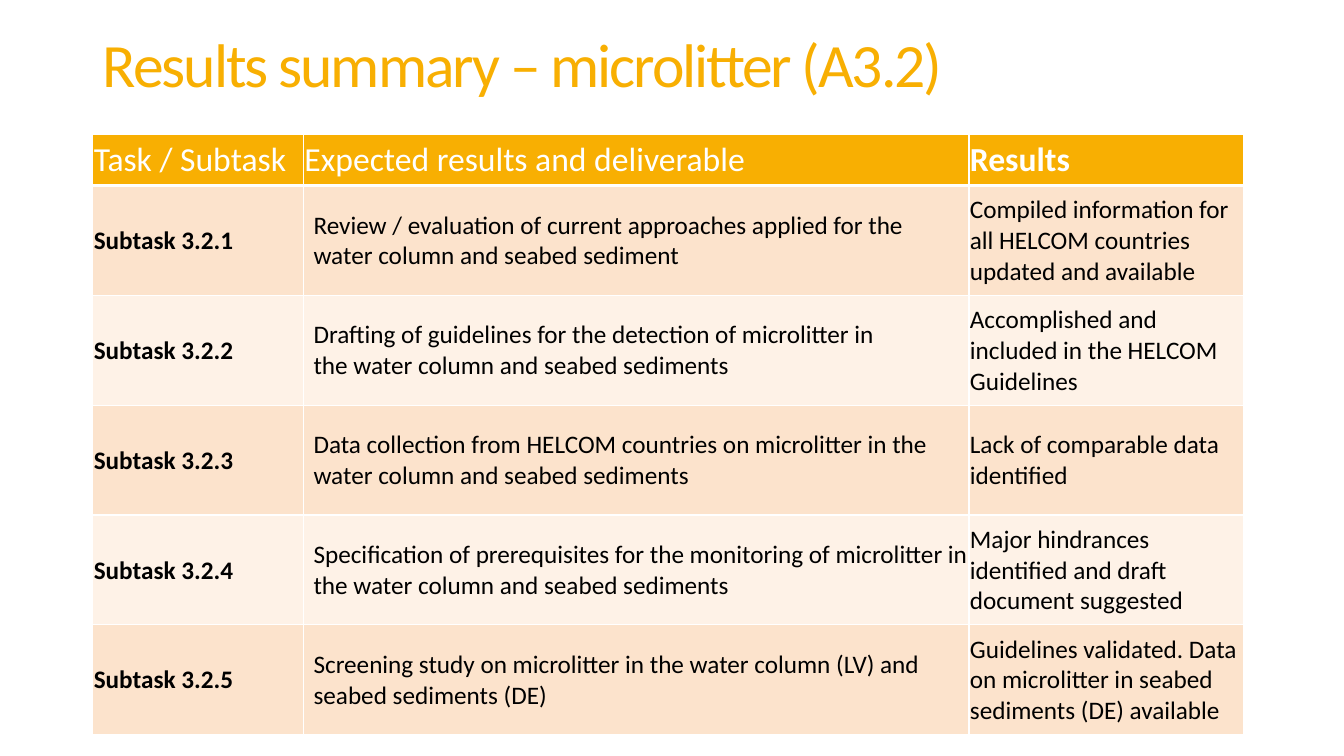
from dataclasses import dataclass

from lxml import etree
from pptx import Presentation
from pptx.dml.color import RGBColor
from pptx.enum.text import MSO_ANCHOR, PP_ALIGN
from pptx.oxml.ns import qn
from pptx.util import Inches, Pt

TOP, MIDDLE = MSO_ANCHOR.TOP, MSO_ANCHOR.MIDDLE
LEFT = PP_ALIGN.LEFT

FONT = "Calibri"
AMBER, WHITE, BLACK = "F8AF02", "FFFFFF", "000000"
BANDS = ("FCE3CC", "FEF2E7")

# Page grid, in inches
PAGE_WIDTH, PAGE_HEIGHT = 13.33, 7.5
MARGIN = 0.92
TABLE_TOP = 1.33
COLUMNS = (2.09, 6.6, 2.72)
HEADER_HEIGHT, ROW_HEIGHT = 0.51, 1.09
CELL_INSET = 0.01
DELIVERABLE_INDENT = 0.09


@dataclass
class Subtask:
    name: str
    deliverable: str
    result: str


HEADINGS = ("Task / Subtask", "Expected results and deliverable", "Results")
SUBTASKS = (
    Subtask("Subtask 3.2.1",
            "Review / evaluation of current approaches applied for the "
            "water column and seabed sediment",
            "Compiled information for all HELCOM countries updated and available"),
    Subtask("Subtask 3.2.2",
            "Drafting of guidelines for the detection of microlitter in \v"
            "the water column and seabed sediments",
            "Accomplished and included in the HELCOM Guidelines"),
    Subtask("Subtask 3.2.3",
            "Data collection from HELCOM countries on microlitter in the "
            "water column and seabed sediments",
            "Lack of comparable data identified"),
    Subtask("Subtask 3.2.4",
            "Specification of prerequisites for the monitoring of microlitter "
            "in the water column and seabed sediments",
            "Major hindrances identified and draft document suggested"),
    Subtask("Subtask 3.2.5",
            "Screening study on microlitter in the water column (LV) and "
            "seabed sediments (DE)",
            "Guidelines validated. Data on microlitter in seabed sediments (DE) available"),
)


def color(value: str) -> RGBColor:
    return RGBColor.from_string(value)


def write(frame, text: str, *, size: float, fill: str, bold: bool = False,
          indent: float = 0, line_spacing: float = 1, tracking: float = 0) -> None:
    """Put one formatted paragraph in a text frame."""
    frame.word_wrap = True
    para = frame.paragraphs[0]
    para.text = text
    para.alignment = LEFT
    para.line_spacing = line_spacing
    para.space_before = Pt(0)
    if indent:
        properties = para._p.get_or_add_pPr()
        properties.set("marL", str(Inches(indent)))
        properties.set("indent", "0")
    for span in para.runs:
        span.font.name = FONT
        span.font.size = Pt(size)
        span.font.bold = bold
        span.font.color.rgb = color(fill)
        if tracking:
            span.font._element.set("spc", str(int(tracking * 100)))


def set_borders(cell, bottom: float) -> None:
    """Draw white rules around a cell, with its own bottom width in points."""
    properties = cell._tc.get_or_add_tcPr()
    widths = {"lnL": 1, "lnR": 1, "lnT": 1, "lnB": bottom}
    for position, (side, width) in enumerate(widths.items()):
        line = etree.Element(qn(f"a:{side}"), w=str(Pt(width)))
        solid = etree.SubElement(line, qn("a:solidFill"))
        etree.SubElement(solid, qn("a:srgbClr"), val=WHITE)
        properties.insert(position, line)


def fill_cell(cell, text: str, background: str, *, bottom: float = 1, **text_format) -> None:
    cell.margin_left = cell.margin_top = cell.margin_right = Inches(CELL_INSET)
    cell.margin_bottom = 0
    cell.vertical_anchor = MIDDLE
    cell.fill.solid()
    cell.fill.fore_color.rgb = color(background)
    set_borders(cell, bottom)
    write(cell.text_frame, text, **text_format)


def add_title(page) -> None:
    title = page.shapes.title
    title.left, title.top = Inches(MARGIN), Inches(0.29)
    title.width, title.height = Inches(10.5), Inches(1.45)
    title.text_frame.vertical_anchor = TOP
    write(title.text_frame, "Results summary – microlitter (A3.2)",
          size=44, fill=AMBER, line_spacing=0.9, tracking=-1.5)


def add_results_table(page) -> None:
    heights = [HEADER_HEIGHT] + [ROW_HEIGHT] * len(SUBTASKS)
    table = page.shapes.add_table(
        len(heights), len(COLUMNS), Inches(MARGIN), Inches(TABLE_TOP),
        Inches(sum(COLUMNS)), Inches(sum(heights))).table
    for column, width in zip(table.columns, COLUMNS):
        column.width = Inches(width)
    for row, height in zip(table.rows, heights):
        row.height = Inches(height)

    # Header row
    for index, heading in enumerate(HEADINGS):
        fill_cell(table.cell(0, index), heading, AMBER, bottom=3,
                  size=24, fill=WHITE, bold=heading == "Results")

    # Subtask rows, in alternating bands
    for number, subtask in enumerate(SUBTASKS):
        texts = (subtask.name, subtask.deliverable, subtask.result)
        for index, text in enumerate(texts):
            fill_cell(table.cell(number + 1, index), text, BANDS[number % 2],
                      size=18, fill=BLACK, bold=index == 0,
                      indent=DELIVERABLE_INDENT if index == 1 else 0)


def main() -> None:
    deck = Presentation()
    deck.slide_width, deck.slide_height = Inches(PAGE_WIDTH), Inches(PAGE_HEIGHT)
    title_only = deck.slide_layouts[5]
    page = deck.slides.add_slide(title_only)
    add_title(page)
    add_results_table(page)
    deck.save("out.pptx")


if __name__ == "__main__":
    main()
